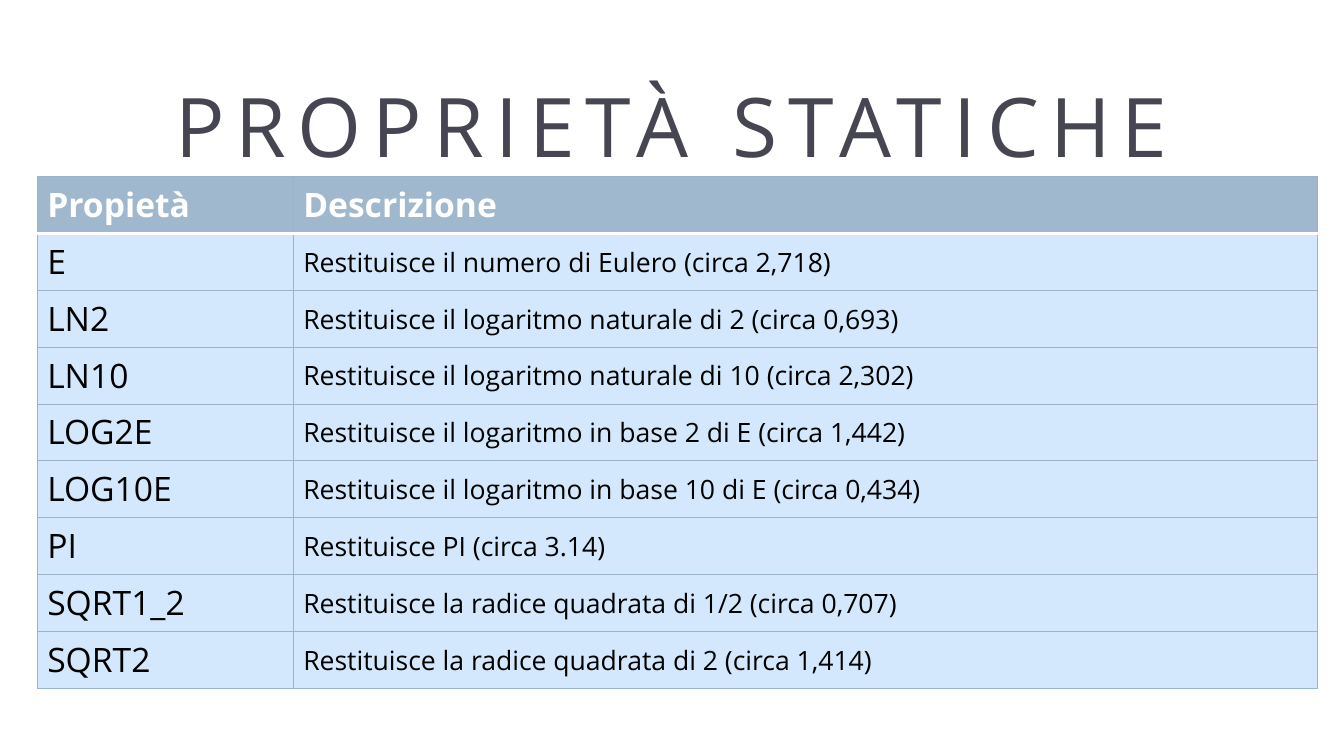
from dataclasses import dataclass
from typing import Any

from pptx import Presentation
from pptx.dml.color import RGBColor
from pptx.enum.text import MSO_ANCHOR, PP_ALIGN
from pptx.oxml import parse_xml
from pptx.oxml.ns import nsdecls
from pptx.slide import Slide
from pptx.table import _Cell
from pptx.text.text import _Paragraph, _Run
from pptx.util import Pt

WHITE = RGBColor(0xFF, 0xFF, 0xFF)
BLACK = RGBColor(0x00, 0x00, 0x00)
TITLE_GREY = RGBColor(0x46, 0x46, 0x53)
HEADER_BLUE = RGBColor(0x9F, 0xB8, 0xCD)
BODY_BLUE = RGBColor(0xD3, 0xE8, 0xFC)
GRID_BLUE = RGBColor(0x9A, 0xB4, 0xCA)

FONT = "Open Sans"
TITLE_FORMAT = {"name": FONT, "size": Pt(58.7), "bold": False}
HEADER_FORMAT = {"name": FONT, "size": Pt(24), "bold": True}
NAME_FORMAT = {"name": FONT, "size": Pt(24), "bold": False}
DESCRIPTION_FORMAT = {"name": FONT, "size": Pt(19), "bold": False}

ROW_HEIGHT = 40.6
COLUMN_WIDTHS = (182.9, 731.5)


@dataclass(frozen=True)
class Property:
    name: str
    description: str


@dataclass(frozen=True)
class Border:
    color: RGBColor = GRID_BLUE
    width: float = 0.75


GRID = Border()
HEADER_RULE = Border(WHITE, 2)

HEADER = Property("Propietà", "Descrizione")
PROPERTIES = (
    Property("E", "Restituisce il numero di Eulero (circa 2,718)"),
    Property("LN2", "Restituisce il logaritmo naturale di 2 (circa 0,693)"),
    Property("LN10", "Restituisce il logaritmo naturale di 10 (circa 2,302)"),
    Property("LOG2E", "Restituisce il logaritmo in base 2 di E (circa 1,442)"),
    Property("LOG10E", "Restituisce il logaritmo in base 10 di E (circa 0,434)"),
    Property("PI", "Restituisce PI (circa 3.14)"),
    Property("SQRT1_2", "Restituisce la radice quadrata di 1/2 (circa 0,707)"),
    Property("SQRT2", "Restituisce la radice quadrata di 2 (circa 1,414)"),
)


def write(paragraph: _Paragraph, text: str, style: dict[str, Any], color: RGBColor) -> _Run:
    run = paragraph.add_run()
    run.text = text
    for attribute, value in style.items():
        setattr(run.font, attribute, value)
    run.font.color.rgb = color
    return run


def set_borders(cell: _Cell, top: Border, bottom: Border) -> None:
    sides = {"lnL": GRID, "lnR": GRID, "lnT": top, "lnB": bottom}
    properties = cell._tc.get_or_add_tcPr()
    for position, (side, border) in enumerate(sides.items()):
        line = parse_xml(
            f'<a:{side} {nsdecls("a")} w="{Pt(border.width)}"><a:solidFill>'
            f'<a:srgbClr val="{border.color}"/></a:solidFill></a:{side}>'
        )
        properties.insert(position, line)


def fill_cell(
    cell: _Cell, text: str, style: dict[str, Any], color: RGBColor, background: RGBColor
) -> None:
    cell.fill.solid()
    cell.fill.fore_color.rgb = background
    write(cell.text_frame.paragraphs[0], text, style, color)


def draw_title(slide: Slide) -> None:
    title = slide.shapes.add_textbox(Pt(48), Pt(44), Pt(864), Pt(90)).text_frame
    title.word_wrap = True
    title.vertical_anchor = MSO_ANCHOR.MIDDLE
    heading = title.paragraphs[0]
    heading.alignment = PP_ALIGN.CENTER
    run = write(heading, "PROPRIETÀ STATICHE", TITLE_FORMAT, TITLE_GREY)
    run._r.get_or_add_rPr().set("spc", "800")


def draw_properties(slide: Slide) -> None:
    entries = (HEADER, *PROPERTIES)
    table = slide.shapes.add_table(
        len(entries), 2, Pt(26.6), Pt(126.2),
        Pt(sum(COLUMN_WIDTHS)), Pt(ROW_HEIGHT * len(entries)),
    ).table
    table.horz_banding = False
    for column, width in zip(table.columns, COLUMN_WIDTHS):
        column.width = Pt(width)
    for index, (row, entry) in enumerate(zip(table.rows, entries)):
        row.height = Pt(ROW_HEIGHT)
        name, description = row.cells
        if index == 0:
            fill_cell(name, entry.name, HEADER_FORMAT, WHITE, HEADER_BLUE)
            fill_cell(description, entry.description, HEADER_FORMAT, WHITE, HEADER_BLUE)
        else:
            fill_cell(name, entry.name, NAME_FORMAT, BLACK, BODY_BLUE)
            fill_cell(description, entry.description, DESCRIPTION_FORMAT, BLACK, BODY_BLUE)
            description.text_frame.paragraphs[0].line_spacing = 1.15
        for cell in (name, description):
            set_borders(
                cell,
                top=HEADER_RULE if index == 1 else GRID,
                bottom=HEADER_RULE if index == 0 else GRID,
            )


def main() -> None:
    presentation = Presentation()
    presentation.slide_width = Pt(960)
    presentation.slide_height = Pt(540)
    slide = presentation.slides.add_slide(presentation.slide_layouts[6])
    draw_title(slide)
    draw_properties(slide)
    presentation.save("out.pptx")


if __name__ == "__main__":
    main()
